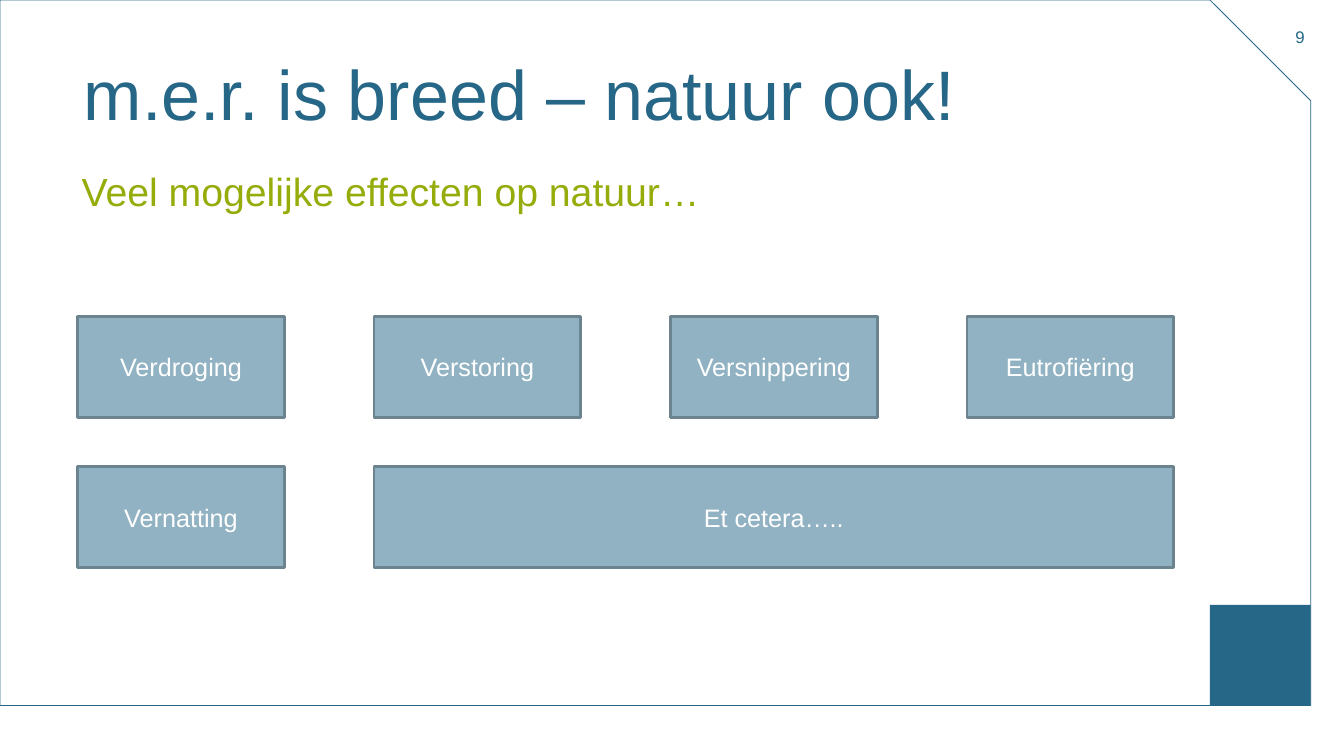
from math import cos, pi, sin

from pptx import Presentation
from pptx.dml.color import RGBColor
from pptx.enum.shapes import MSO_SHAPE as Shape
from pptx.enum.text import MSO_ANCHOR as Anchor, MSO_AUTO_SIZE as AutoSize, PP_ALIGN as Align
from pptx.oxml.ns import qn
from pptx.util import Inches, Pt

TITLE = "m.e.r. is breed – natuur ook!"
SUBTITLE = "Veel mogelijke effecten op natuur…"
PAGE_NUMBER = "9"
EFFECT_ROWS = [
    [("Verdroging", 1), ("Verstoring", 1), ("Versnippering", 1), ("Eutrofiëring", 1)],
    [("Vernatting", 1), ("Et cetera…..", 3)],
]
COLORS = {"blue": "266687", "green": "96AC0A", "box": "91B2C2", "edge": "6B8490", "white": "FFFFFF"}
FONT = "Arial"

FRAME = [(0.42, 0.42), (12.41, 0.42), (12.91, 0.92), (12.91, 7.08), (0.42, 7.08)]
BADGE_X, BADGE_Y, BADGE_RADIUS = 12.71, 6.43, 0.34
GRID_LEFT, GRID_TOP = 0.77, 3.14
COLUMN_STEP, ROW_STEP = 2.94, 1.49
BOX_WIDTH, BOX_HEIGHT = 2.05, 1


def color(name):
    return RGBColor.from_string(COLORS[name])


def write(shape, text, size, ink, align, anchor, inset=0):
    frame = shape.text_frame
    frame.text = text
    frame.word_wrap = True
    frame.auto_size = AutoSize.NONE
    frame.vertical_anchor = anchor
    frame.margin_left = frame.margin_right = Inches(inset)
    frame.margin_top = frame.margin_bottom = Inches(inset / 2)
    paragraph = frame.paragraphs[0]
    paragraph.alignment = align
    paragraph.space_before = Pt(0)
    font = paragraph.runs[0].font
    font.name, font.size, font.color.rgb = FONT, Pt(size), color(ink)
    return paragraph


def place(shape, left, top, width, height):
    shape.left, shape.top = Inches(left), Inches(top)
    shape.width, shape.height = Inches(width), Inches(height)


def add_outline(shapes, points):
    builder = shapes.build_freeform(*points[0], scale=Inches(1))
    builder.add_line_segments(points[1:], close=True)
    outline = builder.convert_to_shape()
    outline.shadow.inherit = False
    return outline


def main():
    prs = Presentation()
    prs.slide_width, prs.slide_height = Inches(13.33), Inches(7.5)
    slide = prs.slides.add_slide(prs.slide_layouts[1])
    shapes = slide.shapes
    title, subtitle = slide.placeholders

    border = add_outline(shapes, FRAME)
    border.fill.background()
    border.line.color.rgb = color("blue")
    border.line.width = Pt(0.6)

    angles = [2 * pi * step / 72 for step in range(72)]
    right_edge = FRAME[2][0]
    badge = add_outline(shapes, [
        (min(BADGE_X + BADGE_RADIUS * cos(a), right_edge), BADGE_Y + BADGE_RADIUS * sin(a))
        for a in angles
    ])
    badge.fill.solid()
    badge.fill.fore_color.rgb = color("blue")
    badge.line.fill.background()

    place(title, 0.83, 0.62, 11.42, 0.71)
    write(title, TITLE, 50, "blue", Align.LEFT, Anchor.BOTTOM)

    place(subtitle, 0.81, 1.66, 11.42, 4.84)
    lead = write(subtitle, SUBTITLE, 28, "green", Align.LEFT, Anchor.TOP)
    lead.line_spacing = 1.01
    properties = lead._p.get_or_add_pPr()
    properties.set("marL", "0")
    properties.set("indent", "0")
    properties.append(properties.makeelement(qn("a:buNone"), {}))

    number = shapes.add_textbox(Inches(12.51), Inches(0.17), Inches(0.43), Inches(0.4))
    write(number, PAGE_NUMBER, 12, "blue", Align.RIGHT, Anchor.MIDDLE)

    for row, effects in enumerate(EFFECT_ROWS):
        column = 0
        for effect, span in effects:
            box = shapes.add_shape(
                Shape.RECTANGLE,
                Inches(GRID_LEFT + column * COLUMN_STEP), Inches(GRID_TOP + row * ROW_STEP),
                Inches(BOX_WIDTH + (span - 1) * COLUMN_STEP), Inches(BOX_HEIGHT))
            box.shadow.inherit = False
            box.fill.solid()
            box.fill.fore_color.rgb = color("box")
            box.line.color.rgb = color("edge")
            box.line.width = Pt(2)
            write(box, effect, 18, "white", Align.CENTER, Anchor.MIDDLE, 0.1)
            column += span

    prs.save("out.pptx")


if __name__ == "__main__":
    main()
